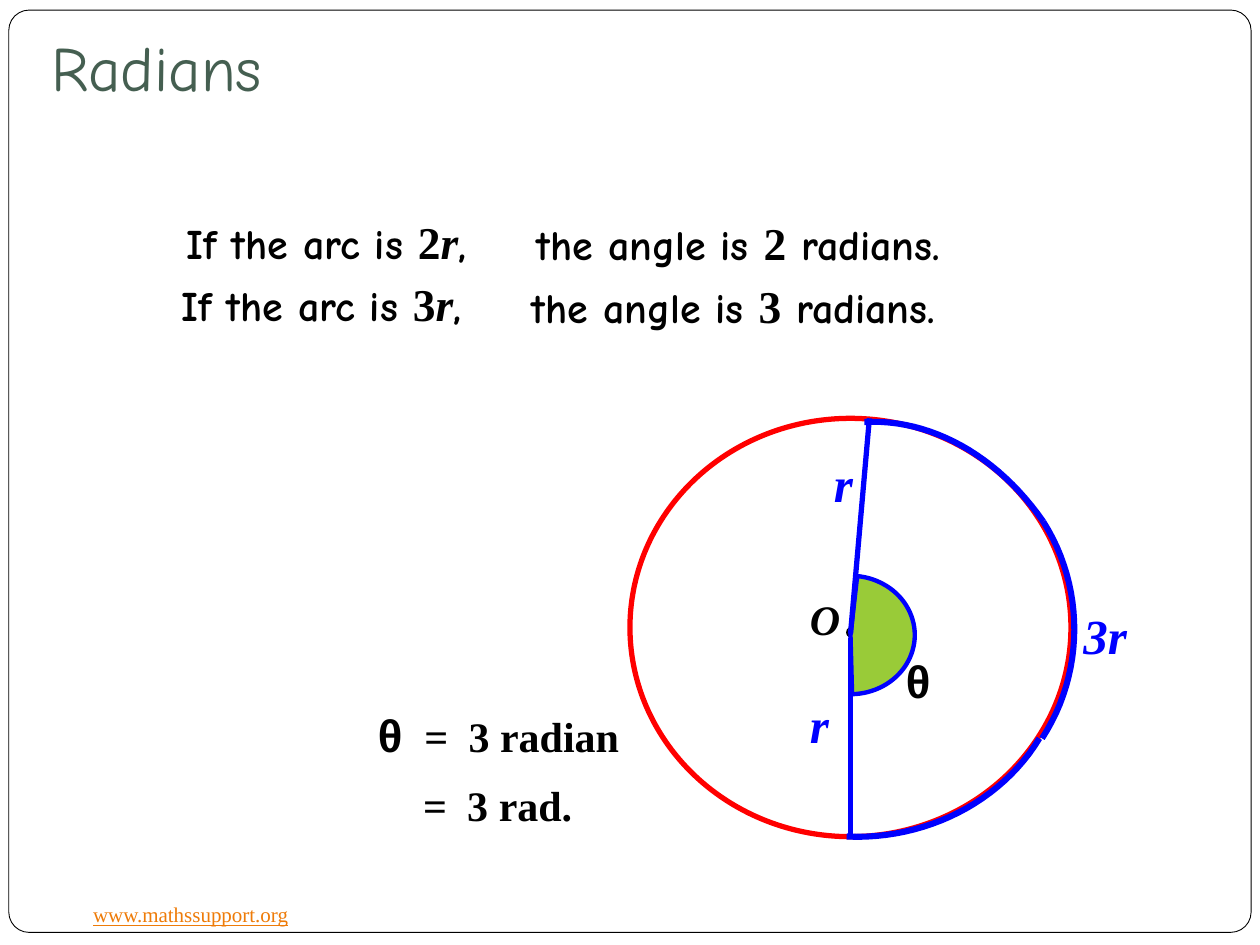
from lxml import etree
from pptx import Presentation
from pptx.dml.color import RGBColor
from pptx.enum import shapes, text
from pptx.oxml.ns import qn
from pptx.util import Pt

PX = 9144  # EMU per px, 100 px to the inch
COLORS = {name: RGBColor.from_string(value) for name, value in {
    "black": "000000", "white": "FFFFFF", "blue": "0000FF", "red": "FF0000",
    "green": "99CB38", "title": "455F51", "link": "EE7B08"}.items()}
COMIC, TIMES, ARIAL = "Comic Neue", "Times New Roman", "Arial"

prs = Presentation()
prs.slide_width, prs.slide_height = 1000 * PX, 750 * PX
slide = prs.slides.add_slide(prs.slide_layouts[5])


def add_preset(preset, box, fill, line, width):
    shape = slide.shapes.add_shape(preset, *(v * PX for v in box))
    shape.shadow.inherit = False
    if fill:
        shape.fill.solid()
        shape.fill.fore_color.rgb = COLORS[fill]
    else:
        shape.fill.background()
    shape.line.color.rgb = COLORS[line]
    shape.line.width = Pt(width)
    return shape


def add_label(box, runs, color="black", bold=True, wrap=True, tabs=()):
    """Each run is (wording, size, font, italic)."""
    frame = slide.shapes.add_textbox(*(v * PX for v in box)).text_frame
    frame.word_wrap = wrap
    paragraph = frame.paragraphs[0]
    if tabs:
        stops = etree.SubElement(paragraph._p.get_or_add_pPr(), qn("a:tabLst"))
        for stop in tabs:
            etree.SubElement(stops, qn("a:tab"), pos=str(stop * PX), algn="l")
    paragraph.font.bold = bold
    paragraph.font.color.rgb = COLORS[color]
    for wording, size, name, italic in runs:
        run = paragraph.add_run()
        run.text = wording
        font = paragraph.font if len(runs) == 1 else run.font
        font.size, font.name, font.italic = Pt(size), name, italic
    return paragraph


# Page frame and footer address
border = add_preset(shapes.MSO_SHAPE.ROUNDED_RECTANGLE, (7, 8, 986, 732), "white", "black", 0.5)
border.adjustments[0] = 0.022
address = add_label((64, 711, 177, 30), [("www.mathssupport.org", 12, TIMES, False)],
                    "link", bold=False, wrap=False)
address.font.underline = True

# Title, brought in front of the page frame
title = slide.shapes.title
slide.shapes._spTree.append(title._element)
title.left, title.top, title.width, title.height = (v * PX for v in (31, 30, 850, 63))
heading = title.text_frame
heading.text = "Radians"
heading.auto_size = text.MSO_AUTO_SIZE.NONE
heading.vertical_anchor = text.MSO_ANCHOR.BOTTOM
heading.margin_bottom = 10 * PX
heading.paragraphs[0].alignment = text.PP_ALIGN.LEFT
title_font = heading.paragraphs[0].font
title_font.size, title_font.name = Pt(36), COMIC
title_font.color.rgb = COLORS["title"]

# Circle, centre and angle
add_preset(shapes.MSO_SHAPE.OVAL, (500, 332, 350, 332), None, "red", 3)
add_preset(shapes.MSO_SHAPE.OVAL, (672, 498, 8, 8), "black", "black", 0.75)
angle = add_preset(shapes.MSO_SHAPE.PIE, (624, 457, 102, 94), "green", "blue", 2.5)
angle.adjustments[0], angle.adjustments[1] = 165.88, 53.08

# Radii
for ends in ((690, 332, 675, 503), (675, 663, 675, 506)):
    radius = slide.shapes.add_connector(shapes.MSO_CONNECTOR.STRAIGHT, *(v * PX for v in ends))
    radius.line.color.rgb = COLORS["blue"]
    radius.line.width = Pt(3)
    etree.SubElement(radius._element.spPr, qn("a:effectLst"))

# Three arcs, each one radius long, sampled from cubic curves
STEPS = 24
for curve in (((672, 664), (735, 667), (795, 636), (825, 586)),
              ((827, 586), (861, 534), (861, 466), (828, 414)),
              ((828, 414), (792, 362), (739, 332), (686, 335))):
    points = []
    for step in range(STEPS + 1):
        t = step / STEPS
        weights = ((1 - t) ** 3, 3 * t * (1 - t) ** 2, 3 * t ** 2 * (1 - t), t ** 3)
        points.append(tuple(PX * sum(w * p[axis] for w, p in zip(weights, curve))
                            for axis in (0, 1)))
    builder = slide.shapes.build_freeform(*points[0])
    builder.add_line_segments(points[1:], close=False)
    arc = builder.convert_to_shape()
    arc.shadow.inherit = False
    arc.fill.background()
    arc.line.color.rgb = COLORS["blue"]
    arc.line.width = Pt(3.5)

# Diagram labels
for wording, box, size, color in (("r", (633, 546, 50, 57), 28, "blue"),
                                  ("r", (652, 355, 50, 57), 28, "blue"),
                                  ("3r", (850, 476, 67, 57), 28, "blue"),
                                  ("O", (633, 466, 58, 50), 24, "black")):
    add_label(box, [(wording, size, TIMES, True)], color)
add_label((709, 513, 58, 53), [("θ", 26, ARIAL, False)])

# Result, with the equals signs and values lined up
add_label((290, 556, 242, 53), [("θ", 26, ARIAL, False), ("\t=\t3 radian", 24, TIMES, False)],
          tabs=(37, 72))
add_label((326, 614, 242, 50), [("=\t3 rad.", 24, TIMES, False)], tabs=(35,))

# Statements
for count, left, arc_top, angle_top in (("2", 138, 165, 166), ("3", 134, 214, 216)):
    add_label((left, arc_top, 312, 53), [("If the arc is ", 24, COMIC, False),
                                         (count, 26, TIMES, False),
                                         ("r", 26, TIMES, True),
                                         (",", 24, COMIC, False)])
    add_label((left + 278, angle_top, 401, 53), [("the angle is ", 24, COMIC, False),
                                                 (count, 26, TIMES, False),
                                                 (" radians.", 24, COMIC, False)])

prs.save("out.pptx")
